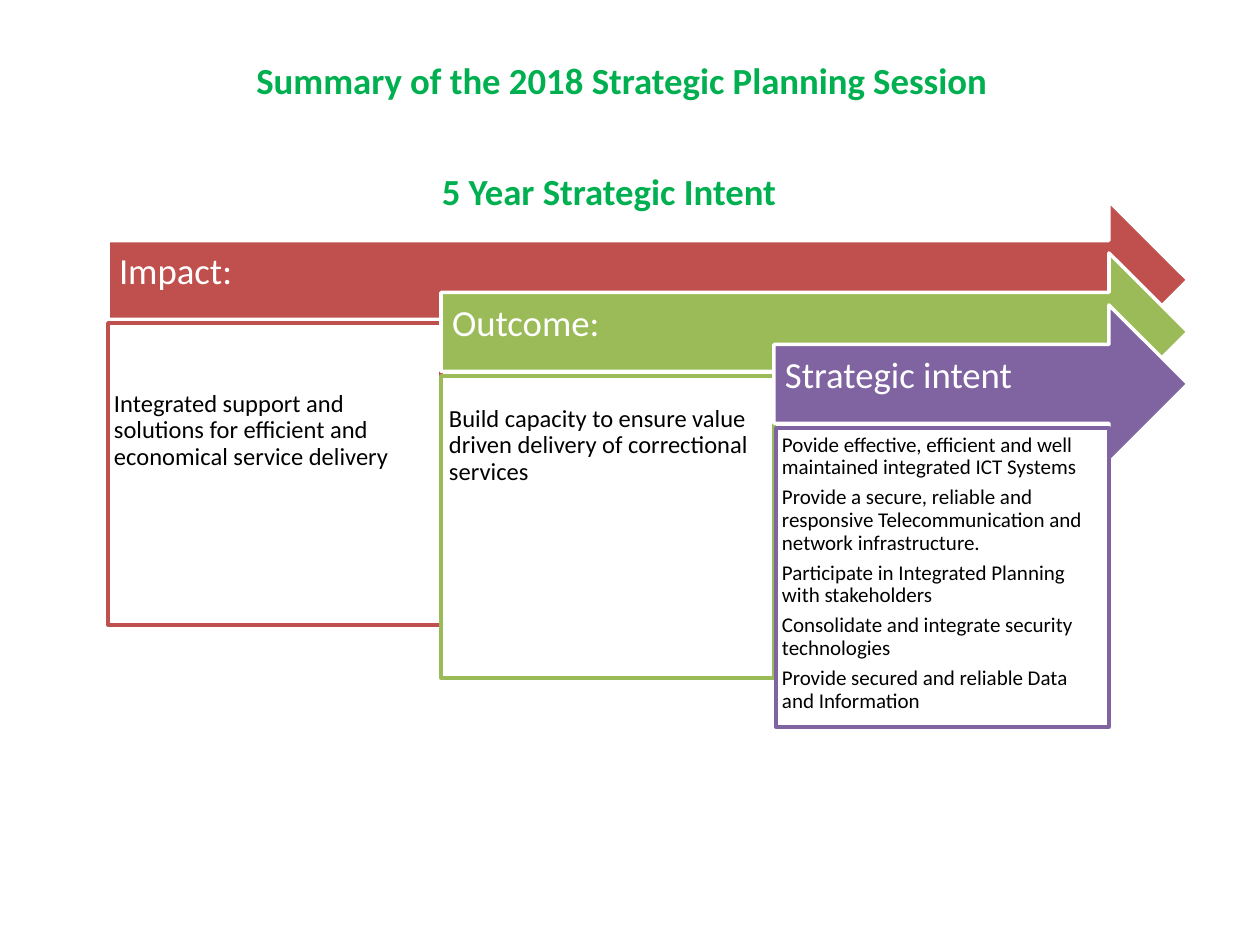
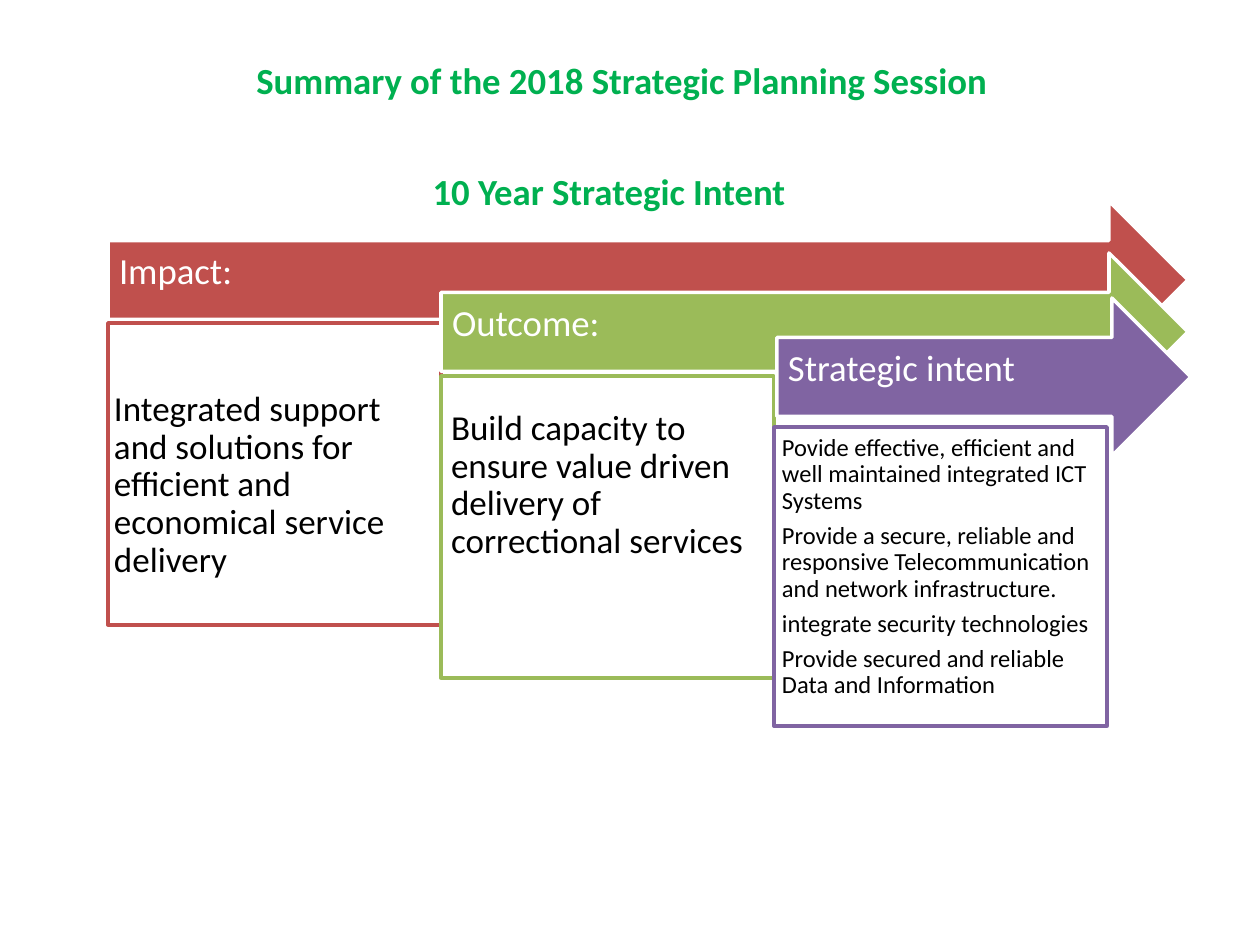
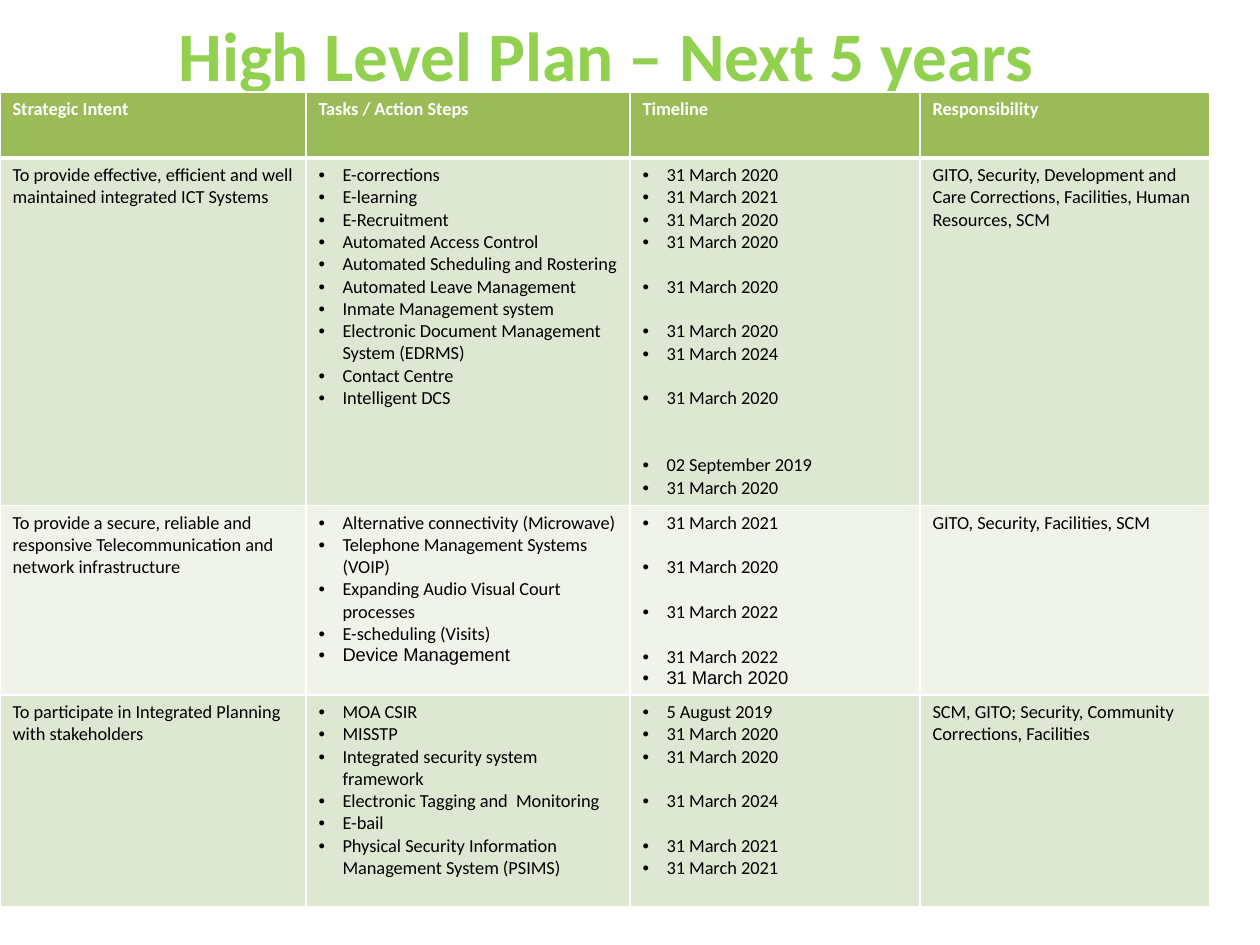
import pptx
import pptx.util
import pptx.dml.color
import pptx.enum.shapes
import pptx.enum.text
import pptx.oxml
import pptx.oxml.ns

SHAPE = pptx.enum.shapes.MSO_SHAPE
ANCHOR = pptx.enum.text.MSO_ANCHOR
ALIGN = pptx.enum.text.PP_ALIGN
Pt = pptx.util.Pt

COLORS = {
    "heading": "00B050", "plan_title": "92D050", "white": "FFFFFF", "black": "000000",
    "impact": "C0504D", "outcome": "9BBB59", "intent": "8064A2",
    "band_dark": "DEE7D1", "band_light": "EFF3EA",
}
FONT = "Calibri"
HEADING_SIZE = 21
TABLE_SIZE = 10.5
LINE_HEIGHT = 12.8

SESSION_TITLE = "Summary of the 2018 Strategic Planning Session"
IMPACT = ["Integrated support and solutions for efficient and economical service delivery"]
OUTCOME = ["Build capacity to ensure value driven delivery of correctional services"]
SYSTEMS = "Povide effective, efficient and well maintained integrated ICT Systems"
NETWORK = "Provide a secure, reliable and responsive Telecommunication and network infrastructure."
DATA = "Provide secured and reliable Data and Information"

INTENT_SLIDES = [
    {"heading": "5 Year Strategic Intent", "stages": [
        {"name": "Impact:", "color": "impact", "goals": IMPACT, "size": 14, "inset": 6, "drop": 68},
        {"name": "Outcome:", "color": "outcome", "goals": OUTCOME, "size": 14, "inset": 8, "drop": 30},
        {"name": "Strategic intent", "color": "intent", "size": 12, "inset": 6, "drop": 6,
         "goals": [SYSTEMS, NETWORK, "Participate in Integrated Planning with stakeholders",
                   "Consolidate and integrate security technologies", DATA],
         "panel_shift": (2, -1), "panel_height": 299},
    ]},
    {"heading": "10 Year Strategic Intent", "stages": [
        {"name": "Impact:", "color": "impact", "goals": IMPACT, "size": 20, "inset": 6, "drop": 68},
        {"name": "Outcome:", "color": "outcome", "goals": OUTCOME, "size": 20, "inset": 10, "drop": 34},
        {"name": "Strategic intent", "color": "intent", "size": 14, "inset": 8, "drop": 8,
         "goals": [SYSTEMS, NETWORK, "integrate security technologies", DATA],
         "arrow_shift": (3, -7), "panel_shift": (0, -2), "panel_height": 299},
    ]},
]

PLAN_TITLE = "High Level Plan – Next 5 years "
PLAN_HEADERS = ["Strategic Intent", "Tasks / Action Steps", "Timeline", "Responsibility"]
PLAN_ROWS = [
    {"intent": "To provide effective, efficient and well maintained integrated ICT Systems",
     "tasks": ["E-corrections", "E-learning", "E-Recruitment", "Automated Access Control",
               "Automated Scheduling and Rostering", "Automated Leave Management",
               "Inmate Management system", "Electronic Document Management System (EDRMS)",
               "Contact Centre", "Intelligent DCS"],
     "dates": [("31 March 2020", 0), ("31 March 2021", 0), ("31 March 2020", 0),
               ("31 March 2020", 0), ("31 March 2020", 1), ("31 March 2020", 1),
               ("31 March 2024", 0), ("31 March 2020", 1), ("02 September 2019", 2),
               ("31 March 2020", 0)],
     "owners": "GITO, Security, Development and Care Corrections, Facilities, Human Resources, SCM"},
    {"intent": "To provide a secure, reliable and responsive Telecommunication and network infrastructure",
     "tasks": ["Alternative connectivity (Microwave)", "Telephone Management Systems (VOIP)",
               "Expanding Audio Visual Court processes", "E-scheduling (Visits)",
               "Device Management"],
     "dates": [("31 March 2021", 0), ("31 March 2020", 1), ("31 March 2022", 1),
               ("31 March 2022", 1), ("31 March 2020", 0)],
     "owners": "GITO, Security, Facilities, SCM", "last_font": "Arial"},
    {"intent": "To participate in Integrated Planning with stakeholders",
     "tasks": ["MOA CSIR", "MISSTP", "Integrated security system framework",
               "Electronic Tagging and  Monitoring", "E-bail",
               "Physical Security Information Management System (PSIMS)"],
     "dates": [("5 August 2019", 0), ("31 March 2020", 0), ("31 March 2020", 0),
               ("31 March 2024", 1), ("31 March 2021", 1), ("31 March 2021", 0)],
     "owners": "SCM, GITO; Security, Community Corrections, Facilities"},
]
COLUMN_WIDTHS = [306, 324, 290, 290]
ROW_HEIGHTS = [66, 346, 189, 212]


def px(length):
    return pptx.util.Emu(round(length * 914400 / 126))


def color(name):
    return pptx.dml.color.RGBColor.from_string(COLORS[name])


def add_run(paragraph, text, size, tint, bold=False, font=FONT):
    run = paragraph.add_run()
    run.text = text
    run.font.name = font
    run.font.size = Pt(size)
    run.font.bold = bold
    run.font.color.rgb = color(tint)


def next_paragraph(frame, index):
    return frame.add_paragraph() if index else frame.paragraphs[0]


def set_margins(frame, left, top, right, bottom):
    frame.margin_left, frame.margin_top = px(left), px(top)
    frame.margin_right, frame.margin_bottom = px(right), px(bottom)


def write_heading(shape, text, size, tint):
    frame = shape.text_frame
    frame.word_wrap = True
    frame.auto_size = pptx.enum.text.MSO_AUTO_SIZE.NONE
    frame.vertical_anchor = ANCHOR.MIDDLE
    frame.paragraphs[0].alignment = ALIGN.CENTER
    add_run(frame.paragraphs[0], text, size, tint, True)


def add_titled_slide(deck, text, box, size, tint):
    slide = deck.slides.add_slide(deck.slide_layouts[5])
    title = slide.shapes.title
    title.left, title.top, title.width, title.height = map(px, box)
    write_heading(title, text, size, tint)
    return slide


def add_block(slide, kind, box, fill, line, texts, size, tint, margins, anchor):
    block = slide.shapes.add_shape(kind, *map(px, box))
    block.shadow.inherit = False
    block.fill.solid()
    block.fill.fore_color.rgb = color(fill)
    block.line.color.rgb = color(line)
    block.line.width = Pt(2)
    frame = block.text_frame
    frame.word_wrap = True
    frame.vertical_anchor = anchor
    set_margins(frame, *margins)
    for index, text in enumerate(texts):
        paragraph = next_paragraph(frame, index)
        paragraph.alignment = ALIGN.LEFT
        paragraph.line_spacing = 0.9
        paragraph.space_after = Pt(0.35 * size)
        add_run(paragraph, text, size, tint)


def add_stage(slide, index, stage):
    left = 108 + 333 * index
    dx, dy = stage.get("arrow_shift", (0, 0))
    add_block(slide, SHAPE.RIGHT_ARROW, (left + dx, 201 + 52 * index + dy, 1188 - left, 158),
              stage["color"], "white", [stage["name"]], HEADING_SIZE, "white",
              (11, 11, 35, 25), ANCHOR.MIDDLE)
    dx, dy = stage.get("panel_shift", (0, 0))
    inset = stage["inset"]
    add_block(slide, SHAPE.RECTANGLE,
              (left + dx, 323 + 53 * index + dy, 333, stage.get("panel_height", 302)),
              "white", stage["color"], stage["goals"], stage["size"], "black",
              (inset, stage["drop"], inset, inset), ANCHOR.TOP)


def add_intent_slide(deck, content):
    slide = add_titled_slide(deck, SESSION_TITLE, (197, 40, 850, 80), HEADING_SIZE, "heading")
    for index, stage in enumerate(content["stages"]):
        add_stage(slide, index, stage)
    heading = slide.shapes.add_textbox(*map(px, (184, 151, 850, 80)))
    set_margins(heading.text_frame, 9, 5, 9, 5)
    write_heading(heading, content["heading"], HEADING_SIZE, "heading")


def style_cell(cell, fill, bottom_width):
    cell.fill.solid()
    cell.fill.fore_color.rgb = color(fill)
    properties = cell._tc.get_or_add_tcPr()
    widths = {"lnL": 1, "lnR": 1, "lnT": 1, "lnB": bottom_width}
    for position, (side, width) in enumerate(widths.items()):
        properties.insert(position, pptx.oxml.parse_xml(
            f'<a:{side} {pptx.oxml.ns.nsdecls("a")} w="{Pt(width)}"><a:solidFill>'
            f'<a:srgbClr val="{COLORS["white"]}"/></a:solidFill></a:{side}>'))


def write_bullets(cell, items, last_font):
    for index, (text, skipped_lines) in enumerate(items):
        paragraph = next_paragraph(cell.text_frame, index)
        properties = paragraph._p.get_or_add_pPr()
        properties.set("marL", str(px(24)))
        properties.set("indent", str(-px(24)))
        properties.append(pptx.oxml.parse_xml(
            f'<a:buFont {pptx.oxml.ns.nsdecls("a")} typeface="Arial"/>'))
        properties.append(pptx.oxml.parse_xml(
            f'<a:buChar {pptx.oxml.ns.nsdecls("a")} char="•"/>'))
        if skipped_lines:
            paragraph.space_before = Pt(skipped_lines * LINE_HEIGHT)
        font = last_font if index == len(items) - 1 else FONT
        add_run(paragraph, text, TABLE_SIZE, "black", font=font)


def add_plan_slide(deck):
    slide = add_titled_slide(deck, PLAN_TITLE, (18, 35, 1192, 38), 39.6, "plan_title")
    box = (0, 92, sum(COLUMN_WIDTHS), sum(ROW_HEIGHTS))
    plan = slide.shapes.add_table(len(ROW_HEIGHTS), len(COLUMN_WIDTHS), *map(px, box)).table
    for column, width in zip(plan.columns, COLUMN_WIDTHS):
        column.width = px(width)
    for row, height in zip(plan.rows, ROW_HEIGHTS):
        row.height = px(height)
    for column, header in enumerate(PLAN_HEADERS):
        cell = plan.cell(0, column)
        style_cell(cell, "outcome", 3)
        add_run(cell.text_frame.paragraphs[0], header, TABLE_SIZE, "white", True)
    for number, entry in enumerate(PLAN_ROWS, 1):
        intent, tasks, dates, owners = plan.rows[number].cells
        for cell in (intent, tasks, dates, owners):
            style_cell(cell, "band_dark" if number % 2 else "band_light", 1)
        for cell, text in ((intent, entry["intent"]), (owners, entry["owners"])):
            add_run(cell.text_frame.paragraphs[0], text, TABLE_SIZE, "black")
        last_font = entry.get("last_font", FONT)
        write_bullets(tasks, [(task, 0) for task in entry["tasks"]], last_font)
        write_bullets(dates, entry["dates"], last_font)


def main():
    deck = pptx.Presentation()
    deck.slide_width, deck.slide_height = px(1260), px(945)
    for content in INTENT_SLIDES:
        add_intent_slide(deck, content)
    add_plan_slide(deck)
    deck.save("out.pptx")


if __name__ == "__main__":
    main()
